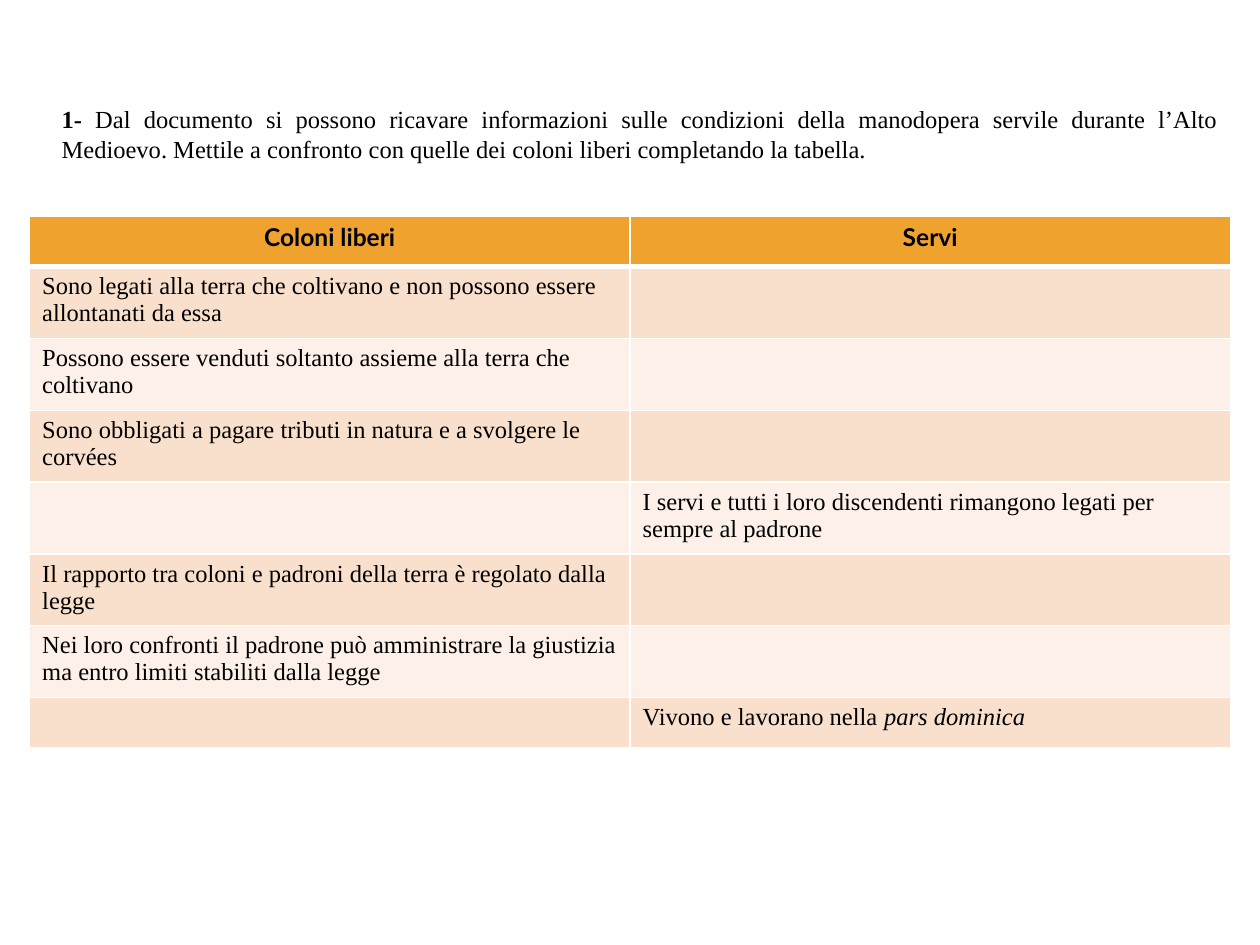
import pptx
import pptx.dml.color
import pptx.enum.text
import pptx.oxml
import pptx.oxml.ns
import pptx.util

COLORS = {"text": "000000", "border": "FFFFFF", "header": "F0A22E",
          "odd": "F9E0CD", "even": "FCF0E8"}
ALIGN = pptx.enum.text.PP_ALIGN
HEADERS = ["Coloni liberi", "Servi"]
ROWS = [
    ("Sono legati alla terra che coltivano e non possono essere allontanati da essa", ""),
    ("Possono essere venduti soltanto assieme alla terra che coltivano", ""),
    ("Sono obbligati a pagare tributi in natura e a svolgere le corvées", ""),
    ("", "I servi e tutti i loro discendenti rimangono legati per sempre al padrone"),
    ("Il rapporto tra coloni e padroni della terra è regolato dalla legge", ""),
    ("Nei loro confronti il padrone può amministrare la giustizia "
     "ma entro limiti stabiliti dalla legge", ""),
    ("", [("Vivono e lavorano nella ", ""), ("pars dominica", "i")]),
]
ROW_HEIGHTS = [0.4] + [0.57] * 6 + [0.4]


def rgb(name):
    return pptx.dml.color.RGBColor.from_string(COLORS[name])


class Deck:
    body_font, head_font, size = "Times New Roman", "Lato", 14

    def __init__(self, width, height):
        self.prs = pptx.Presentation()
        self.prs.slide_width = pptx.util.Inches(width)
        self.prs.slide_height = pptx.util.Inches(height)
        self.s = self.prs.slides.add_slide(self.prs.slide_layouts[6])

    def box(self, x, y, w, h):
        """Turn shares of the slide's size into lengths."""
        sw, sh = self.prs.slide_width, self.prs.slide_height
        return int(x * sw), int(y * sh), int(w * sw), int(h * sh)

    def fill_text(self, tf, runs, font, align):
        """Fill a frame with a string or with (text, style) pairs; style is b, i or empty."""
        p = tf.paragraphs[0]
        p.alignment = align
        for text, style in [(runs, "")] if isinstance(runs, str) else runs:
            r = p.add_run()
            r.text = text
            r.font.name, r.font.size = font, pptx.util.Pt(self.size)
            r.font.bold, r.font.italic = style == "b", style == "i"
            r.font.color.rgb = rgb("text")

    def text(self, share, runs):
        sp = self.s.shapes.add_textbox(*self.box(*share))
        sp.text_frame.word_wrap = True
        self.fill_text(sp.text_frame, runs, self.body_font, ALIGN.JUSTIFY)

    def borders(self, cell, **widths):
        tcPr = cell._tc.get_or_add_tcPr()
        for i, side in enumerate(("lnL", "lnR", "lnT", "lnB")):
            width = pptx.util.Pt(widths.get(side, 1))
            tcPr.insert(i, pptx.oxml.parse_xml(
                f'<a:{side} {pptx.oxml.ns.nsdecls("a")} w="{width}"><a:solidFill>'
                f'<a:srgbClr val="{COLORS["border"]}"/></a:solidFill></a:{side}>'))

    def cell(self, cell, content, fill, font, align):
        cell.fill.solid()
        cell.fill.fore_color.rgb = rgb(fill)
        if content:
            self.fill_text(cell.text_frame, content, font, align)

    def table(self, share, headers, rows, heights):
        frame = self.s.shapes.add_table(len(rows) + 1, len(headers), *self.box(*share))
        table = frame.table
        for row, height in zip(table.rows, heights):
            row.height = pptx.util.Inches(height)
        for c, title in enumerate(headers):
            head = table.cell(0, c)
            self.cell(head, [(title, "b")], "header", self.head_font, ALIGN.CENTER)
            self.borders(head, lnB=3)
            for r, row in enumerate(rows, 1):
                cell = table.cell(r, c)
                self.cell(cell, row[c], "odd" if r % 2 else "even", self.body_font, ALIGN.LEFT)
                self.borders(cell, lnT=3 if r == 1 else 1)


def main():
    deck = Deck(10, 7.5)
    deck.text((0.039, 0.104, 0.938, 0.076), [
        ("1- ", "b"),
        ("Dal documento si possono ricavare informazioni sulle condizioni della manodopera "
         "servile durante l’Alto Medioevo. Mettile a confronto con quelle dei coloni liberi "
         "completando la tabella.", "")])
    deck.table((0.0235, 0.229, 0.953, 0.56), HEADERS, ROWS, ROW_HEIGHTS)
    deck.prs.save("out.pptx")


if __name__ == "__main__":
    main()
